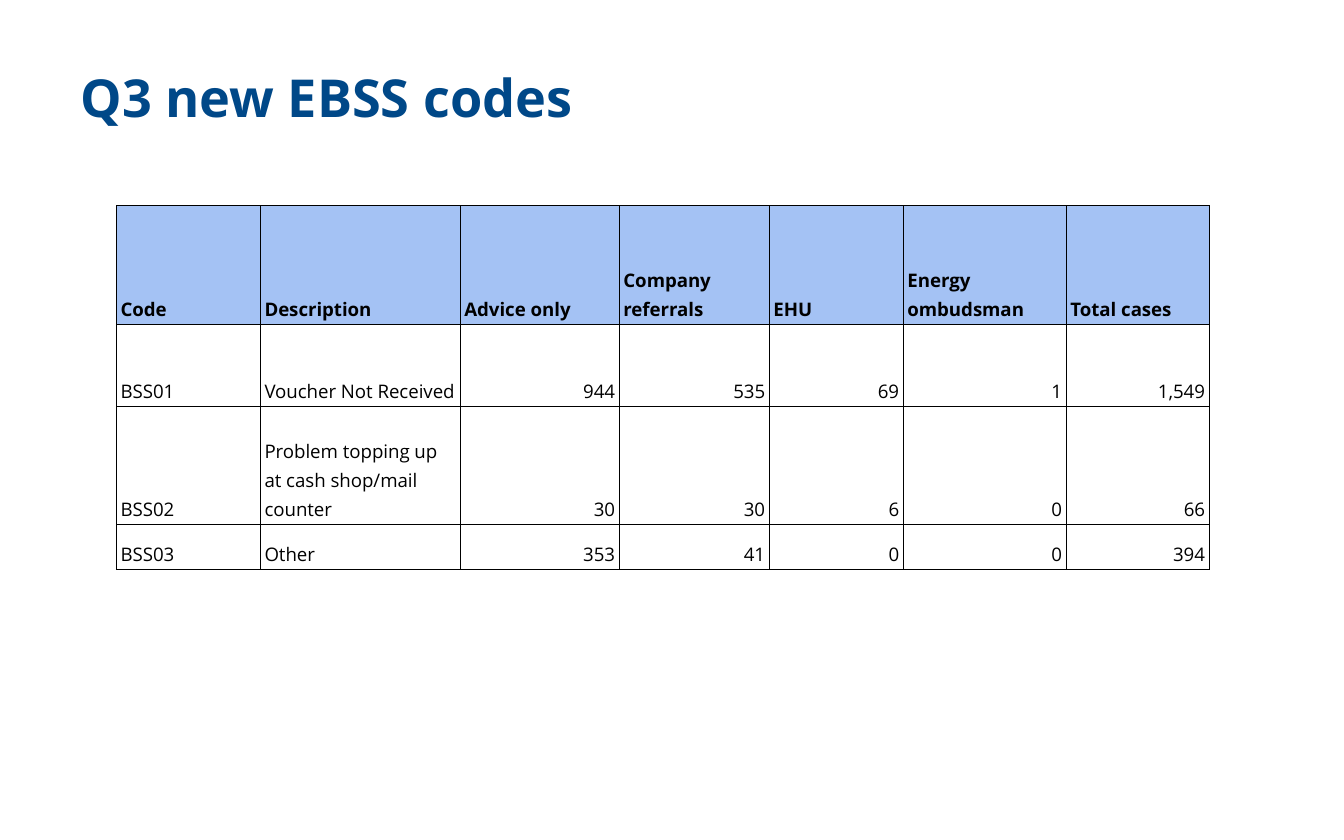
from dataclasses import dataclass

from lxml import etree
from pptx import Presentation
from pptx import util as u
from pptx.dml.color import RGBColor
from pptx.enum import text
from pptx.oxml import ns

Pt = u.Pt


@dataclass(frozen=True)
class Theme:
    font: str = "Open Sans"
    title_size: float = 28
    table_size: float = 10
    title_color: str = "004888"
    ink: str = "000000"
    header_fill: str = "A4C2F4"
    body_fill: str = "FFFFFF"
    border_width: float = 0.5


THEME = Theme()

HEADINGS = ["Code", "Description", "Advice only", "Company referrals", "EHU",
            "Energy ombudsman", "Total cases"]
CASES = [
    ["BSS01", "Voucher Not Received", "944", "535", "69", "1", "1,549"],
    ["BSS02", "Problem topping up at cash shop/mail counter", "30", "30", "6", "0", "66"],
    ["BSS03", "Other", "353", "41", "0", "0", "394"],
]
LABEL_COLUMNS = 2
COLUMN_WIDTHS = [77.1, 107.1, 85.2, 80.4, 71.8, 87.3, 76.6]
ROW_HEIGHTS = [63.7, 43.9, 63.3, 24.1]


def apply(target, values):
    for name, value in values.items():
        setattr(target, name, value)


def style_font(font, size, color, bold):
    apply(font, {"name": THEME.font, "size": Pt(size), "bold": bold})
    font.color.rgb = RGBColor.from_string(color)


def add_title(slide, wording):
    title = slide.shapes.title
    apply(title, {"left": Pt(36), "top": Pt(27.7), "width": Pt(648), "height": Pt(75)})
    frame = title.text_frame
    margins = {f"margin_{side}": Pt(7.2) for side in ("left", "top", "right", "bottom")}
    apply(frame, {"text": wording, "vertical_anchor": text.MSO_ANCHOR.TOP,
                  "auto_size": text.MSO_AUTO_SIZE.NONE, "word_wrap": True, **margins})
    heading = frame.paragraphs[0]
    heading.alignment = text.PP_ALIGN.LEFT
    style_font(heading.runs[0].font, THEME.title_size, THEME.title_color, True)


def add_borders(cell):
    properties = cell._tc.get_or_add_tcPr()
    for side in ("a:lnL", "a:lnR", "a:lnT", "a:lnB"):
        line = etree.SubElement(properties, ns.qn(side), w=str(Pt(THEME.border_width)))
        fill = etree.SubElement(line, ns.qn("a:solidFill"))
        etree.SubElement(fill, ns.qn("a:srgbClr"), val=THEME.ink)


def fill_cell(cell, wording, is_header, is_number):
    apply(cell, {"text": wording, "vertical_anchor": text.MSO_ANCHOR.BOTTOM,
                 "margin_left": Pt(2.25), "margin_right": Pt(2.25),
                 "margin_top": Pt(1.5), "margin_bottom": Pt(1.5)})
    # Borders come before the fill in the cell's properties
    add_borders(cell)
    cell.fill.solid()
    cell.fill.fore_color.rgb = RGBColor.from_string(
        THEME.header_fill if is_header else THEME.body_fill)
    entry = cell.text_frame.paragraphs[0]
    apply(entry, {"line_spacing": 1.15,
                  "alignment": text.PP_ALIGN.RIGHT if is_number else text.PP_ALIGN.LEFT})
    style_font(entry.runs[0].font, THEME.table_size, THEME.ink, is_header)


def add_case_table(slide, rows):
    table = slide.shapes.add_table(
        len(rows), len(COLUMN_WIDTHS), Pt(62.4), Pt(110.1),
        Pt(sum(COLUMN_WIDTHS)), Pt(sum(ROW_HEIGHTS))).table
    for column, width in zip(table.columns, COLUMN_WIDTHS):
        column.width = Pt(width)
    for row, height in zip(table.rows, ROW_HEIGHTS):
        row.height = Pt(height)
    for r, row in enumerate(rows):
        for c, wording in enumerate(row):
            is_header = r == 0
            fill_cell(table.cell(r, c), wording, is_header,
                      is_number=not is_header and c >= LABEL_COLUMNS)


def main():
    deck = Presentation()
    apply(deck, {"slide_width": Pt(720), "slide_height": Pt(450)})
    slide = deck.slides.add_slide(deck.slide_layouts.get_by_name("Title Only"))

    # Heading
    add_title(slide, "Q3 new EBSS codes")

    # Cases by code and outcome
    add_case_table(slide, [HEADINGS, *CASES])

    deck.save("out.pptx")


if __name__ == "__main__":
    main()
